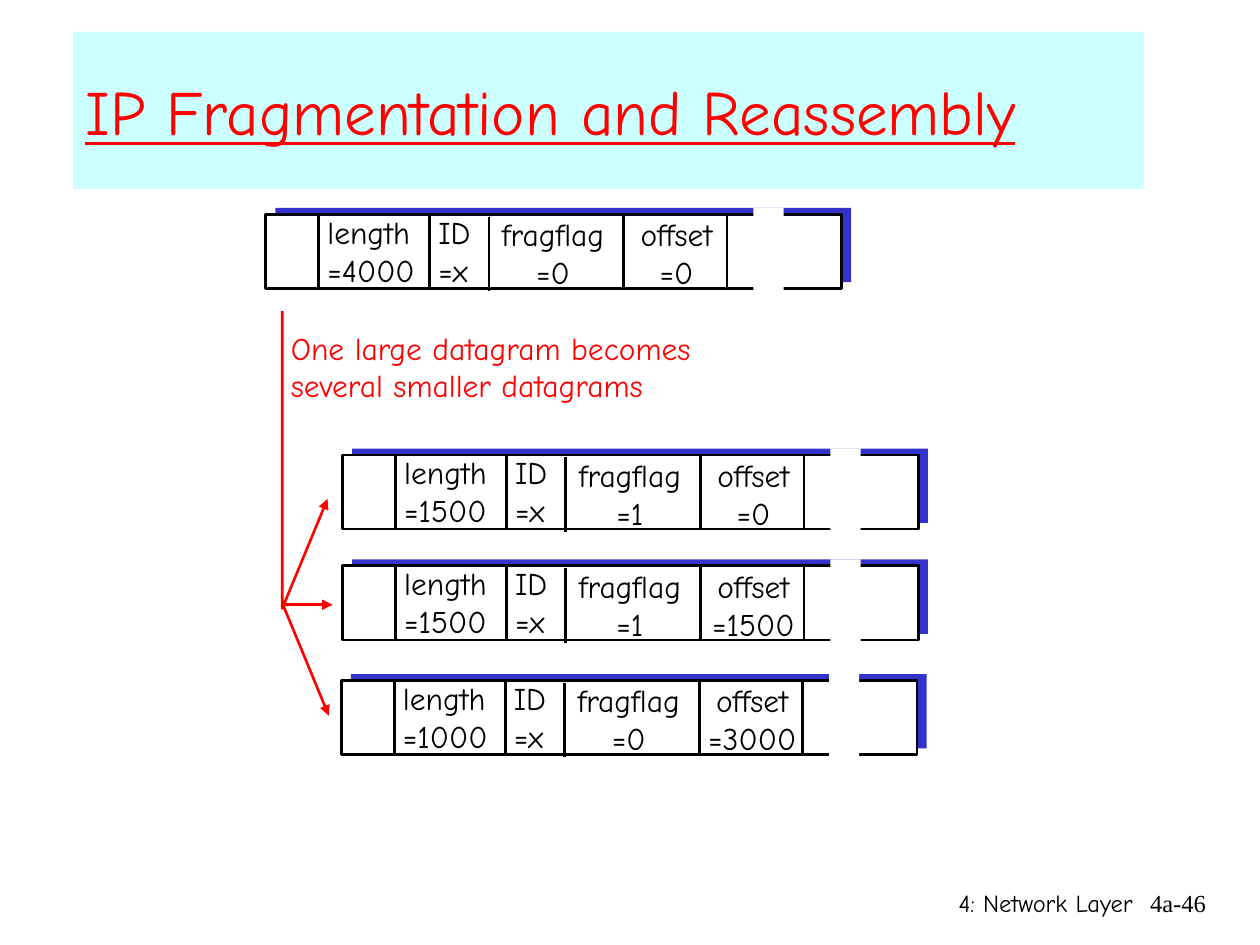
from dataclasses import dataclass

from lxml import etree
from pptx import Presentation, util as u
from pptx.dml.color import RGBColor
from pptx.enum import shapes as sh, text as tx
from pptx.oxml.ns import qn

COLS, ROWS = 100, 75  # the slide's grid; all lengths below are in its cells
BLACK, WHITE, RED, BLUE, CYAN = "000000", "FFFFFF", "FF0000", "3333CC", "CCFFFF"
FONT = "Comic Neue"
LEFT, MID, RIGHT = tx.PP_ALIGN.LEFT, tx.PP_ALIGN.CENTER, tx.PP_ALIGN.RIGHT

prs = Presentation()
prs.slide_width, prs.slide_height = u.Inches(10), u.Inches(7.5)
slide = prs.slides.add_slide(prs.slide_layouts[6])


@dataclass
class Datagram:
    left: float
    top: float
    length: int
    flag: int
    offset: int


@dataclass
class Field:
    name: str
    left: float
    drop: float
    width: float
    align: tx.PP_ALIGN


WIDE, HIGH, DROP = 45.7, 5.9, 0.2
FIELDS = [
    Field("length", 3.9, 0, 9.4, LEFT),
    Field("ID", 12.7, 0, 5.2, LEFT),
    Field("fragflag", 17, DROP, 11.6, MID),
    Field("offset", 27.8, DROP, 9.6, MID),
]
RULES = [(4.2, 0), (13, 0), (17.7, DROP), (28.4, 0), (36.6, 0)]
DATAGRAMS = [
    Datagram(21.1, 17, 4000, 0, 0),
    Datagram(27.2, 36.1, 1500, 1, 0),
    Datagram(27.2, 44.9, 1500, 1, 1500),
    Datagram(27.1, 54, 1000, 0, 3000),
]


def col(n: float) -> int:
    return round(prs.slide_width * n / COLS)


def row(n: float) -> int:
    return round(prs.slide_height * n / ROWS)


def paint(part, color: str) -> None:
    """Give a fill or a font one solid colour."""
    if hasattr(part, "solid"):
        part.solid()
        part = part.fore_color
    else:
        part = part.color
    part.rgb = RGBColor.from_string(color)


def stroke(shape, color: str, arrow: bool = False) -> None:
    paint(shape.line.fill, color)
    shape.line.width = u.Pt(1.5)
    if arrow:
        line = shape.line._get_or_add_ln()
        etree.SubElement(line, qn("a:tailEnd"), type="triangle")


def rect(x: float, y: float, w: float, h: float, fill: str, edge: str = ""):
    box = slide.shapes.add_shape(sh.MSO_SHAPE.RECTANGLE, col(x), row(y), col(w), row(h))
    box.shadow.inherit = False
    paint(box.fill, fill)
    if edge:
        stroke(box, edge)
    else:
        box.line.fill.background()
    return box


def rule(x: float, y: float, x2: float, y2: float, color: str, arrow: bool = False) -> None:
    line = slide.shapes.add_connector(
        sh.MSO_CONNECTOR.STRAIGHT, col(x), row(y), col(x2), row(y2))
    stroke(line, color, arrow)
    etree.SubElement(line._element.spPr, qn("a:effectLst"))


def write(shape, *lines: str, size: int = 18, font: str = FONT, color: str = BLACK,
          align=LEFT, under: bool = False, wrap: bool = False,
          anchor=tx.MSO_ANCHOR.TOP) -> None:
    frame = shape.text_frame
    frame.word_wrap = wrap
    frame.vertical_anchor = anchor
    if not wrap:
        frame.auto_size = tx.MSO_AUTO_SIZE.SHAPE_TO_FIT_TEXT
    for i, line in enumerate(lines):
        para = frame.add_paragraph() if i else frame.paragraphs[0]
        para.alignment = align
        run = para.add_run()
        run.text = line
        run.font.name, run.font.size = font, u.Pt(size)
        run.font.underline = under
        paint(run.font, color)


def label(x: float, y: float, w: float, h: float, *lines: str, **form) -> None:
    write(slide.shapes.add_textbox(col(x), row(y), col(w), row(h)), *lines, **form)


def draw(gram: Datagram) -> None:
    x, y = gram.left, gram.top
    rect(x + 0.75, y - 0.5, WIDE, HIGH, BLUE)
    rect(x, y, WIDE, HIGH, WHITE, BLACK)
    values = [gram.length, "x", gram.flag, gram.offset]
    for field, value in zip(FIELDS, values):
        label(x + field.left, y - 0.6 + field.drop, field.width, 7,
              field.name, f"={value}", align=field.align)
    for left, drop in RULES:
        rule(x + left, y + drop, x + left, y + drop + HIGH, BLACK)
    rect(x + 38.7, y - 0.5, 2.4, 6.6, WHITE)


def split() -> None:
    """Draw the stem and the three arrows to the fragments."""
    pen = slide.shapes.build_freeform(col(22.4), row(24.7))
    pen.add_line_segments([(col(22.4), row(48.3)), (col(26), row(39.6))], close=False)
    stem = pen.convert_to_shape()
    stem.shadow.inherit = False
    stem.fill.background()
    stroke(stem, RED, arrow=True)
    rule(22.4, 48, 26.4, 48, RED, arrow=True)
    rule(22.5, 48.1, 26.1, 56.8, RED, arrow=True)


label(59.2, 70, 31.7, 5, "4: Network Layer", size=14, align=RIGHT, wrap=True)
label(89.3, 70, 7.4, 5, "4a-46", size=14, font="Times New Roman", align=RIGHT, wrap=True)
write(rect(5.8, 2.5, 85, 12.5, CYAN), "IP Fragmentation and Reassembly", size=36,
      color=RED, under=True, wrap=True, anchor=tx.MSO_ANCHOR.MIDDLE)
for gram in DATAGRAMS:
    draw(gram)
split()
label(22.1, 25.6, 35.7, 7, "One large datagram becomes", "several smaller datagrams",
      color=RED)
prs.save("out.pptx")
